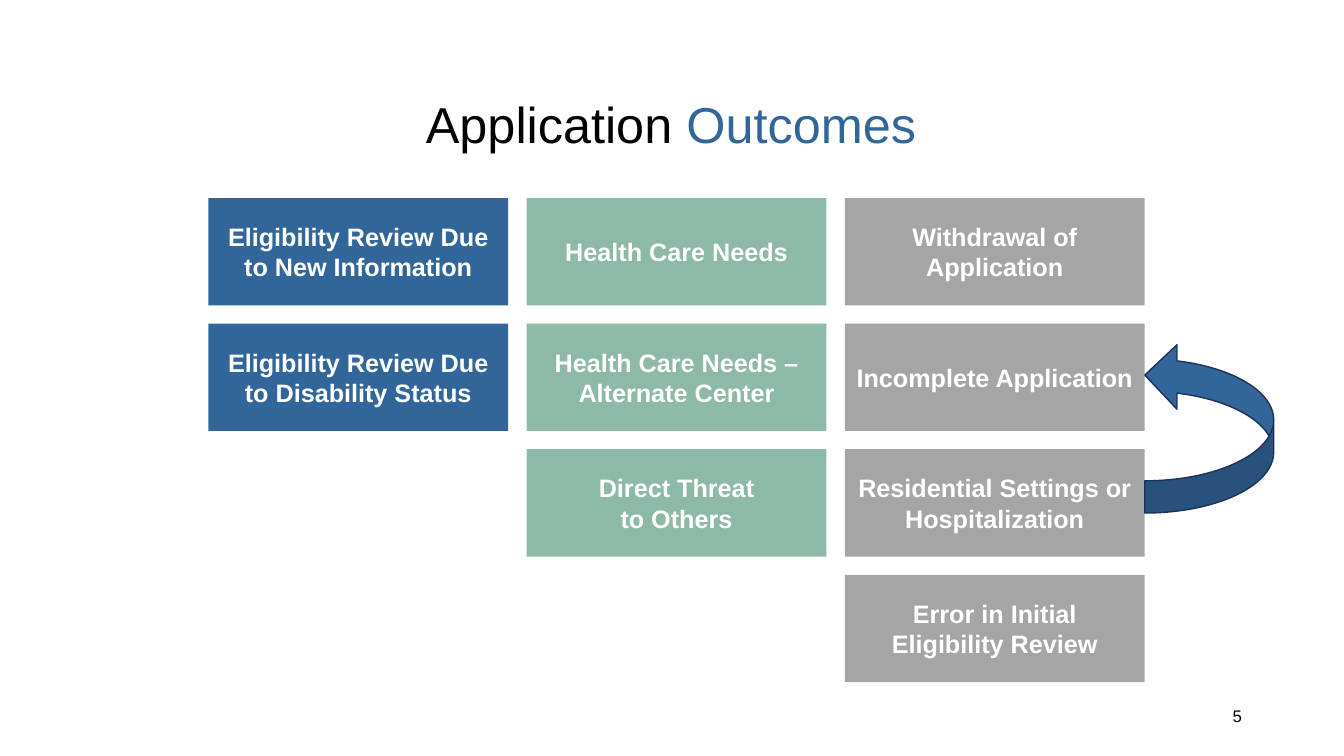
from pptx import Presentation
from pptx.dml.color import RGBColor
from pptx.enum.shapes import MSO_SHAPE
from pptx.enum.text import MSO_ANCHOR, PP_ALIGN
from pptx.util import Cm, Pt

BLUE = RGBColor(0x32, 0x66, 0x9A)
GREEN = RGBColor(0x8D, 0xB9, 0xA6)
GRAY = RGBColor(0xA5, 0xA5, 0xA5)
NAVY = RGBColor(0x1E, 0x32, 0x56)
BLACK = RGBColor(0, 0, 0)
WHITE = RGBColor(0xFF, 0xFF, 0xFF)

COLUMNS = [
    (BLUE, [["Eligibility Review Due to New Information"],
            ["Eligibility Review Due to Disability Status"]]),
    (GREEN, [["Health Care Needs"],
             ["Health Care Needs – Alternate Center"],
             ["Direct Threat", "to Others"]]),
    (GRAY, [["Withdrawal of Application"],
            ["Incomplete Application"],
            ["Residential Settings or Hospitalization"],
            ["Error in Initial", "Eligibility Review"]]),
]


def add_run(para, text, size, color, bold=False):
    run = para.add_run()
    run.text = text
    font = run.font
    font.name, font.size, font.bold = "Arial", Pt(size), bold
    font.color.rgb = color


def add_title(slide, left, top, width, height):
    title = slide.shapes.title
    title.left, title.top, title.width, title.height = left, top, width, height
    title.text_frame.vertical_anchor = MSO_ANCHOR.MIDDLE
    para = title.text_frame.paragraphs[0]
    para.alignment = PP_ALIGN.CENTER
    add_run(para, "Application ", 36, BLACK)
    add_run(para, "Outcomes", 36, BLUE)


def add_tile(slide, lines, color, left, top, width, height):
    tile = slide.shapes.add_shape(MSO_SHAPE.RECTANGLE, left, top, width, height)
    tile.shadow.inherit = False
    tile.fill.solid()
    tile.fill.fore_color.rgb = color
    tile.line.fill.background()
    frame = tile.text_frame
    frame.word_wrap = True
    frame.vertical_anchor = MSO_ANCHOR.MIDDLE
    for i, line in enumerate(lines):
        para = frame.add_paragraph() if i else frame.paragraphs[0]
        para.alignment = PP_ALIGN.CENTER
        add_run(para, line, 18, WHITE, True)


def add_grid(slide, left, top, width, height):
    """Fill the box with columns of tiles, each column hanging from the top."""
    gap = Cm(0.46)
    rows = max(len(tiles) for _, tiles in COLUMNS)
    wide = (width + gap) // len(COLUMNS) - gap
    high = (height + gap) // rows - gap
    for col, (color, tiles) in enumerate(COLUMNS):
        for row, lines in enumerate(tiles):
            add_tile(slide, lines, color, left + col * (wide + gap),
                     top + row * (high + gap), wide, high)


def add_arrow(slide, left, top, width, height):
    """Draw the arrow that leads from the third gray tile up to the second."""
    arrow = slide.shapes.add_shape(MSO_SHAPE.CURVED_LEFT_ARROW,
                                   left, top, width, height)
    arrow.shadow.inherit = False
    arrow.fill.solid()
    arrow.fill.fore_color.rgb = BLUE
    arrow.line.color.rgb = NAVY
    arrow.line.width = Pt(1)
    arrow.element.spPr.xfrm.set("flipV", "1")


def add_number(slide, left, top, width, height):
    frame = slide.shapes.add_textbox(left, top, width, height).text_frame
    frame.word_wrap = True
    para = frame.paragraphs[0]
    para.alignment = PP_ALIGN.RIGHT
    add_run(para, "5", 12, BLACK)


def main():
    deck = Presentation()
    deck.slide_width, deck.slide_height = Cm(33.87), Cm(19.05)
    slide = deck.slides.add_slide(deck.slide_layouts.get_by_name("Title Only"))
    add_title(slide, Cm(4.39), Cm(2.21), Cm(25.04), Cm(1.8))
    add_grid(slide, Cm(5.25), Cm(4.99), Cm(23.6), Cm(12.2))
    add_arrow(slide, Cm(28.85), Cm(8.64), Cm(3.25), Cm(4.29))
    add_number(slide, Cm(23.93), Cm(17.65), Cm(7.62), Cm(1.02))
    deck.save("out.pptx")


if __name__ == "__main__":
    main()
